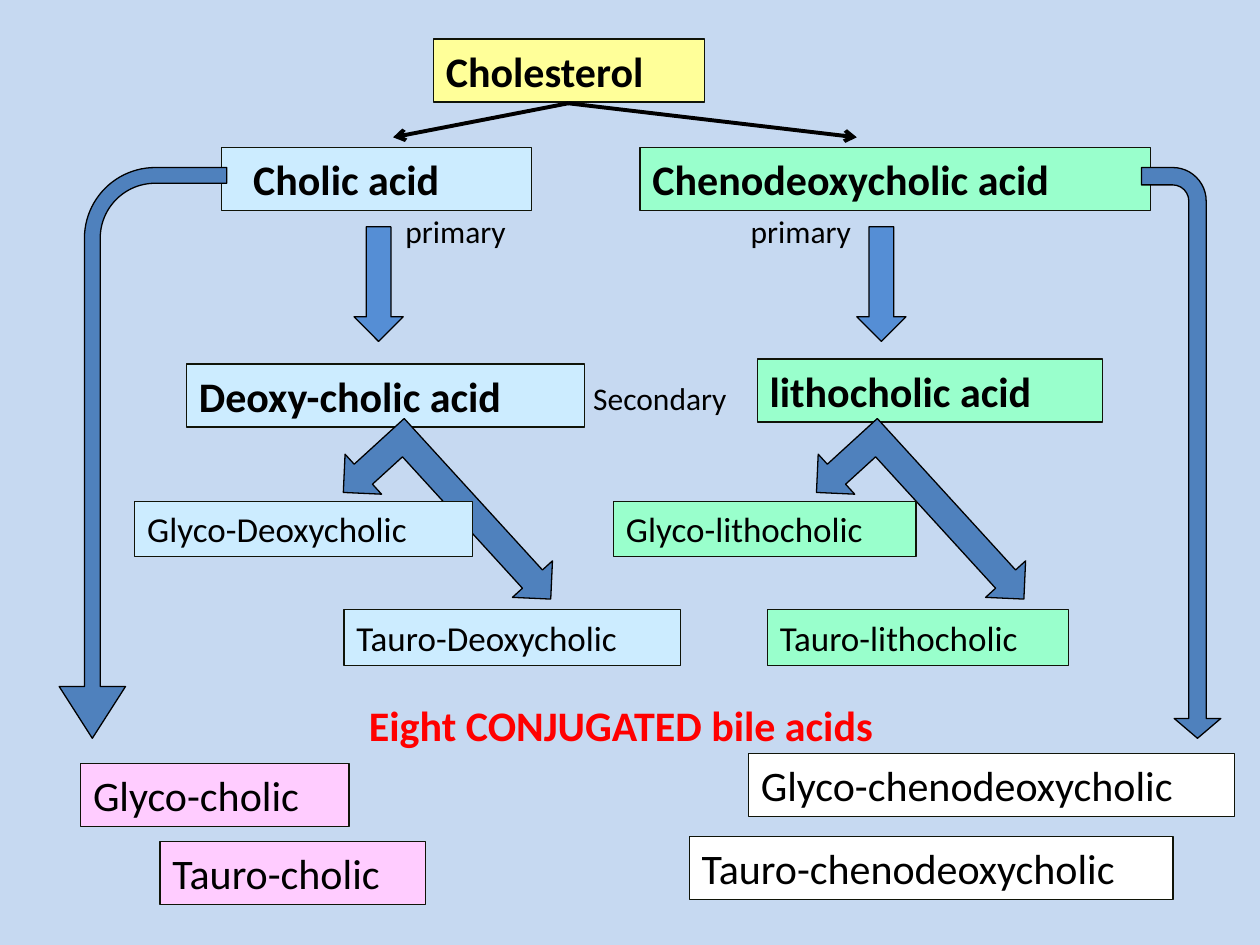
import pptx
import pptx.dml.color
import pptx.enum.shapes
import pptx.enum.text
import pptx.oxml.ns
import pptx.util
from lxml import etree

SHAPE = pptx.enum.shapes.MSO_SHAPE
BLUE, GREEN, PINK, WHITE = "CCECFF", "99FFCC", "FFCCFF", "FFFFFF"
TITLE_ROWS, SMALL_ROWS, LABEL_ROWS = 5, 4.4, 4

deck = pptx.Presentation()
deck.slide_width, deck.slide_height = pptx.util.Inches(10), pptx.util.Inches(7.5)
cell = deck.slide_width / 100  # grid of 100 columns by 75 rows
slide = deck.slides.add_slide(deck.slide_layouts[6])


def paint(color_owner, hex_color):
    """Give a fill, line or font a solid colour from a hex string."""
    if hasattr(color_owner, "solid"):
        color_owner.solid()
        color_owner = color_owner.fore_color
    else:
        color_owner = color_owner.color
    color_owner.rgb = pptx.dml.color.RGBColor.from_string(hex_color)


def place(kind, area, fill=None, outline="000000", text="", size=24, bold=False,
          ink="000000", indent=1):
    """Add a shape, or a text box when kind is None; area is in grid cells."""
    box = [round(n * cell) for n in area]
    if kind is None:
        item = slide.shapes.add_textbox(*box)
    else:
        item = slide.shapes.add_shape(kind, *box)
        item.shadow.inherit = False
        paint(item.fill, fill)
        paint(item.line, outline)
        item.line.width = pptx.util.Pt(0.75)
    if text:
        frame = item.text_frame
        frame_format = {
            "word_wrap": True,
            "vertical_anchor": pptx.enum.text.MSO_ANCHOR.TOP,
            "margin_left": round(indent * cell),
        }
        for name, value in frame_format.items():
            setattr(frame, name, value)
        paragraph = frame.paragraphs[0]
        paragraph.alignment = pptx.enum.text.PP_ALIGN.LEFT
        run = paragraph.add_run()
        run.text = text
        font_format = {"name": "Calibri", "size": pptx.util.Pt(size), "bold": bold}
        for name, value in font_format.items():
            setattr(run.font, name, value)
        paint(run.font, ink)
    return item


# Cholesterol and the unconjugated bile acids
for acid, left, top, width, fill, indent in [
    ("Cholesterol", 34.4, 3.1, 21.5, "FFFF99", 1),
    ("Cholic acid", 17.6, 11.7, 24.6, BLUE, 2.5),
    ("Chenodeoxycholic acid", 50.8, 11.7, 40.5, GREEN, 1),
    ("Deoxy-cholic acid", 14.8, 28.9, 31.6, BLUE, 1),
    ("lithocholic acid", 60.1, 28.5, 27.4, GREEN, 1),
]:
    place(SHAPE.RECTANGLE, (left, top, width, TITLE_ROWS), fill, "101408",
          acid, bold=True, indent=indent)

# Primary to secondary, then each secondary acid to its two conjugates
for primary_left, fork_left in [(28.1, 25.8), (68, 63.35)]:
    place(SHAPE.DOWN_ARROW, (primary_left, 18, 3.9, 9.1), "558ED5")
    fork = place(SHAPE.LEFT_UP_ARROW, (fork_left, 37.5, 19.5, 8.6), "4F81BD")
    fork.rotation = 227.6

# Primary acids straight to their conjugates along the slide's edges
for area, turn, flips, bends in [
    ((-11.3, 29.3, 45.3, 13.3), 90, ["flipV"], (0.094, 0.198, 0.309, 0.422)),
    ((71.1, 32.8, 45.3, 6.3), 270, ["flipH", "flipV"], (0.219, 0.294, 0.25, 0.422)),
]:
    bypass = place(SHAPE.BENT_ARROW, area, "4F81BD")
    bypass.rotation = turn
    for flip in flips:
        bypass._element.spPr.xfrm.set(flip, "1")
    for index, bend in enumerate(bends):
        bypass.adjustments[index] = bend

# The eight conjugated bile acids
for conjugate, left, top, width, rows, size, fill in [
    ("Glyco-Deoxycholic", 10.7, 39.8, 26.8, SMALL_ROWS, 20, BLUE),
    ("Tauro-Deoxycholic", 27.3, 48.4, 26.7, SMALL_ROWS, 20, BLUE),
    ("Glyco-lithocholic", 48.7, 39.8, 24, SMALL_ROWS, 20, GREEN),
    ("Tauro-lithocholic", 60.9, 48.4, 23.9, SMALL_ROWS, 20, GREEN),
    ("Glyco-cholic", 6.4, 60.6, 21.3, TITLE_ROWS, 24, PINK),
    ("Tauro-cholic", 12.7, 66.8, 21.1, TITLE_ROWS, 24, PINK),
    ("Glyco-chenodeoxycholic", 59.4, 59.8, 38.6, TITLE_ROWS, 24, WHITE),
    ("Tauro-chenodeoxycholic", 54.7, 66.4, 38.4, TITLE_ROWS, 24, WHITE),
]:
    place(SHAPE.RECTANGLE, (left, top, width, rows), fill, "101408", conjugate, size)

# Cholesterol to the two primary acids
for end_column in (31.2, 68):
    branch = slide.shapes.add_connector(
        pptx.enum.shapes.MSO_CONNECTOR.STRAIGHT,
        *[round(n * cell) for n in (45.1, 8.2, end_column, 10.9)])
    paint(branch.line, "000000")
    branch.line.width = pptx.util.Pt(2.25)
    etree.SubElement(branch.line._get_or_add_ln(),
                     pptx.oxml.ns.qn("a:tailEnd"), type="arrow")
    etree.SubElement(branch._element.spPr, pptx.oxml.ns.qn("a:effectLst"))

for stage, left, top, width in [
    ("primary", 58.6, 16.3, 10.4),
    ("primary", 31.2, 16.3, 10.4),
    ("Secondary", 46.1, 29.6, 14.8),
]:
    place(None, (left, top, width, LABEL_ROWS), text=stage, size=18)
place(None, (28.3, 55, 43.2, TITLE_ROWS), text="Eight CONJUGATED bile acids",
      bold=True, ink="FF0000")

paint(slide.background.fill, "C6D9F1")
deck.save("out.pptx")
